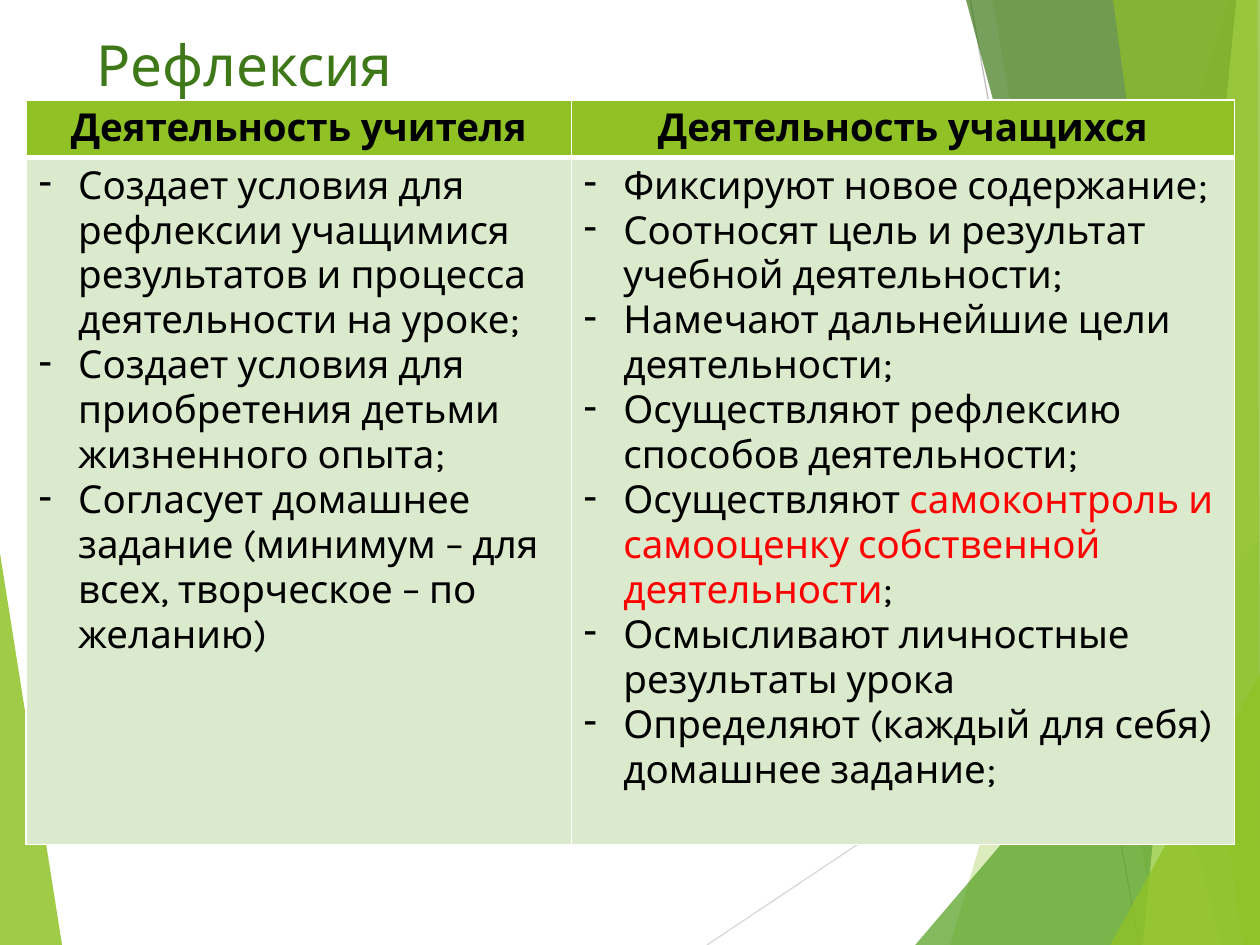
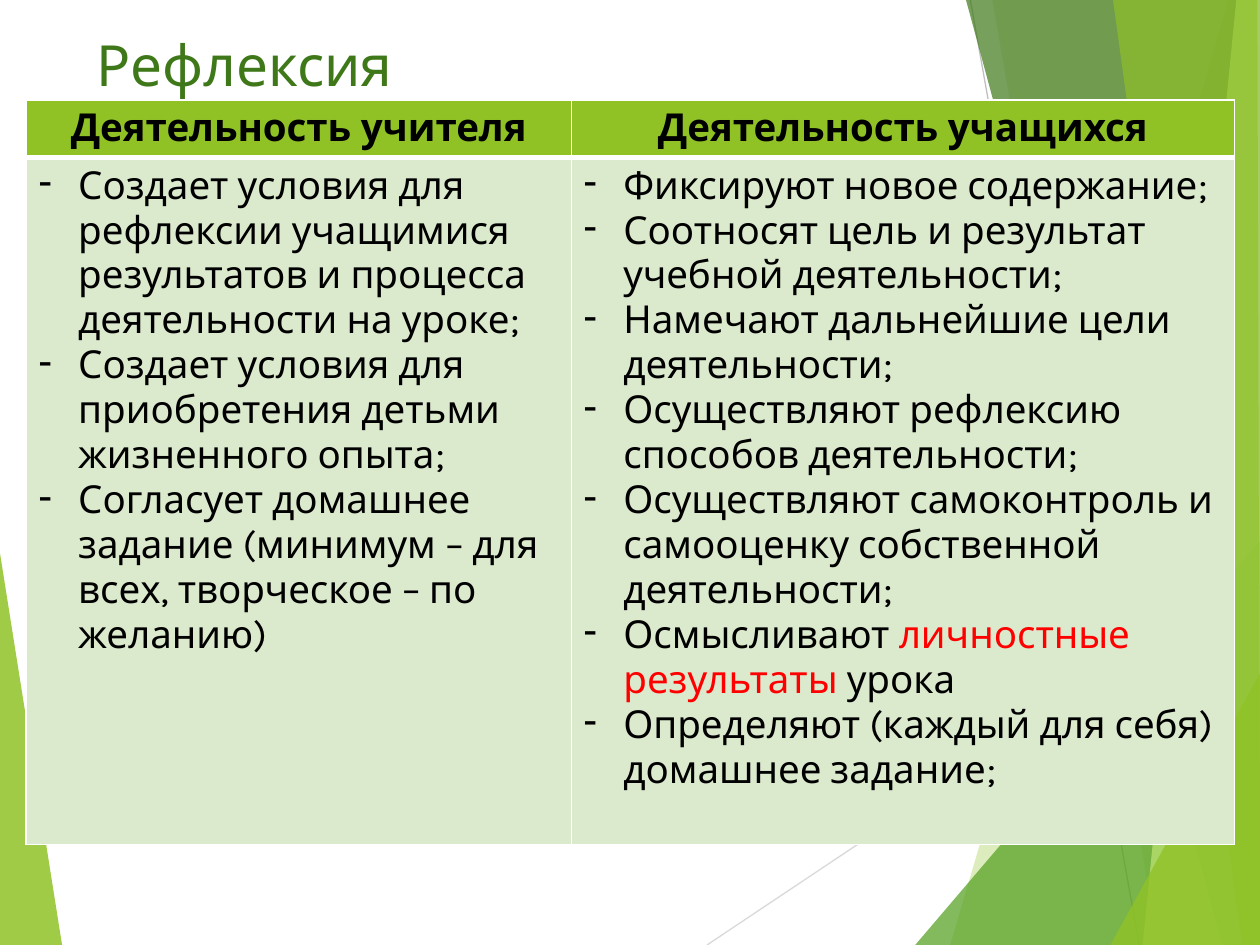
from dataclasses import dataclass

from pptx import Presentation
from pptx.dml.color import RGBColor
from pptx.enum.shapes import MSO_CONNECTOR
from pptx.enum.text import MSO_ANCHOR, MSO_AUTO_SIZE, PP_ALIGN
from pptx.oxml.ns import qn
from pptx.oxml.xmlchemy import OxmlElement
from pptx.util import Pt

LEFT, CENTER = PP_ALIGN.LEFT, PP_ALIGN.CENTER
TOP = MSO_ANCHOR.TOP
NO_FIT = MSO_AUTO_SIZE.NONE
STRAIGHT = MSO_CONNECTOR.STRAIGHT
TITLE_ONLY = 5
WIDE, HIGH = 720, 540


@dataclass(frozen=True)
class Theme:
    font: str = "Karla"
    title: float = 32.4
    body: float = 22
    lime: str = "90C226"
    leaf: str = "54A021"
    dark: str = "3F7819"
    pale: str = "C0E474"
    mint: str = "DBE9CD"
    black: str = "000000"
    white: str = "FFFFFF"
    red: str = "FF0000"


THEME = Theme()

# Corner points, colour and opacity in percent, from back to front
BANDS = [
    ([(0, 316), (35.5, HIGH), (0, HIGH)], THEME.lime, 85),
    ([(702, 0), (543, HIGH), (WIDE, HIGH), (WIDE, 0)], THEME.lime, 30),
    ([(567, 0), (662, HIGH), (WIDE, HIGH), (WIDE, 0)], THEME.lime, 20),
    ([(523, HIGH), (WIDE, 309), (WIDE, HIGH)], THEME.leaf, 72),
    ([(552, 0), (698.5, HIGH), (WIDE, HIGH), (WIDE, 0)], THEME.dark, 70),
    ([(706.5, 0), (653, HIGH), (WIDE, HIGH), (WIDE, 0)], THEME.pale, 70),
    ([(636, 0), (710, HIGH), (WIDE, HIGH), (718.5, 0)], THEME.lime, 65),
    ([(634.5, HIGH), (WIDE, 385), (WIDE, HIGH)], THEME.lime, 80),
]
RAYS = [
    ((404, HIGH), (WIDE, 329), "D9D9D9"),
    ((554.5, 0), (651, HIGH), "BFBFBF"),
]

TITLE = "Рефлексия"
HEADS = ["Деятельность учителя", "Деятельность учащихся"]
LISTS = [
    [
        "Создает условия для рефлексии учащимися результатов и процесса деятельности на уроке;",
        "Создает условия для приобретения детьми жизненного опыта;",
        "Согласует домашнее задание (минимум – для всех, творческое – по желанию)",
    ],
    [
        "Фиксируют новое содержание;",
        "Соотносят цель и результат учебной деятельности;",
        "Намечают дальнейшие цели деятельности;",
        "Осуществляют рефлексию способов деятельности;",
        "Осуществляют самоконтроль и самооценку собственной деятельности;",
        "Осмысливают личностные результаты урока",
        "Определяют (каждый для себя) домашнее задание;",
    ],
]
# The phrase stressed in red on each slide
ACCENTS = [
    "самоконтроль и самооценку собственной деятельности",
    "личностные результаты",
]


def assign(target, values):
    for name, value in values.items():
        setattr(target, name, value)


def paint(fill, color):
    fill.solid()
    fill.fore_color.rgb = RGBColor.from_string(color)


def add_run(para, text, size, color, bold=False):
    run = para.add_run()
    run.text = text
    assign(run.font, {"name": THEME.font, "size": Pt(size), "bold": bold})
    run.font.color.rgb = RGBColor.from_string(color)


def add_band(slide, points, color, alpha):
    spots = [(Pt(x), Pt(y)) for x, y in points]
    pen = slide.shapes.build_freeform(*spots[0])
    pen.add_line_segments(spots[1:], close=True)
    band = pen.convert_to_shape()
    band.shadow.inherit = False
    band.line.fill.background()
    paint(band.fill, color)
    clear = OxmlElement("a:alpha")
    clear.set("val", str(alpha * 1000))
    band.element.spPr.find(".//" + qn("a:srgbClr")).append(clear)
    return band


def add_ray(slide, start, end, color):
    ray = slide.shapes.add_connector(STRAIGHT, *map(Pt, start + end))
    ray.line.width = Pt(0.75)
    ray.line.color.rgb = RGBColor.from_string(color)
    ray.element.spPr.append(OxmlElement("a:effectLst"))
    return ray


def style_layout(layout, slide):
    """Draw the backdrop on a slide, then move it behind the layout's text."""
    first, *rest = [add_band(slide, *band) for band in BANDS]
    rays = [add_ray(slide, *ray) for ray in RAYS]
    tree = layout.shapes.element
    for step, shape in enumerate([first, *rays, *rest]):
        shape.element.find(".//" + qn("p:cNvPr")).set("id", str(100 + step))
        tree.insert(2 + step, shape.element)
    spot = {"left": Pt(48), "top": Pt(13.5), "width": Pt(500), "height": Pt(43)}
    assign(layout.placeholders[0], spot)


def add_title(slide):
    frame = slide.shapes.title.text_frame
    assign(frame, {"auto_size": NO_FIT, "vertical_anchor": TOP, "word_wrap": True})
    para = frame.paragraphs[0]
    para.alignment = LEFT
    add_run(para, TITLE, THEME.title, THEME.dark)


def add_border(cell, tag, width):
    line = OxmlElement(tag)
    line.set("w", str(Pt(width)))
    fill = OxmlElement("a:solidFill")
    color = OxmlElement("a:srgbClr")
    color.set("val", THEME.white)
    fill.append(color)
    line.append(fill)
    cell._tc.get_or_add_tcPr().append(line)


def style_cell(cell, color, upper, lower):
    edges = {"a:lnL": 1, "a:lnR": 1, "a:lnT": upper, "a:lnB": lower}
    for tag, width in edges.items():
        add_border(cell, tag, width)
    paint(cell.fill, color)


def add_dash(para):
    props = para._p.get_or_add_pPr()
    props.set("marL", str(Pt(22.5)))
    props.set("indent", str(Pt(-22.5)))
    mark = OxmlElement("a:buChar")
    mark.set("char", "-")
    props.append(mark)


def fill_list(cell, items, accent):
    frame = cell.text_frame
    for step, item in enumerate(items):
        para = frame.add_paragraph() if step else frame.paragraphs[0]
        add_dash(para)
        colors = (THEME.black, THEME.red, THEME.black)
        for text, color in zip(item.partition(accent), colors):
            if text:
                add_run(para, text, THEME.body, color)


def add_roles(slide, accent):
    """Add the table of what teacher and pupils do."""
    widths, heights = (311.5, 379), (33, 392.5)
    frame = slide.shapes.add_table(
        2, 2, Pt(15), Pt(57), Pt(sum(widths)), Pt(sum(heights)))
    table = frame.table
    for row, height in zip(table.rows, heights):
        row.height = Pt(height)
    for col, (width, head, items) in enumerate(zip(widths, HEADS, LISTS)):
        table.columns[col].width = Pt(width)
        top, body = table.cell(0, col), table.cell(1, col)
        style_cell(top, THEME.lime, 1, 3)
        style_cell(body, THEME.mint, 3, 1)
        para = top.text_frame.paragraphs[0]
        para.alignment = CENTER
        add_run(para, head, THEME.body, THEME.black, bold=True)
        fill_list(body, items, accent)


def main():
    deck = Presentation()
    assign(deck, {"slide_width": Pt(WIDE), "slide_height": Pt(HIGH)})
    layout = deck.slide_layouts[TITLE_ONLY]
    slides = [deck.slides.add_slide(layout) for _ in ACCENTS]
    style_layout(layout, slides[0])
    for slide, accent in zip(slides, ACCENTS):
        add_title(slide)
        add_roles(slide, accent)
    deck.save("out.pptx")


if __name__ == "__main__":
    main()
